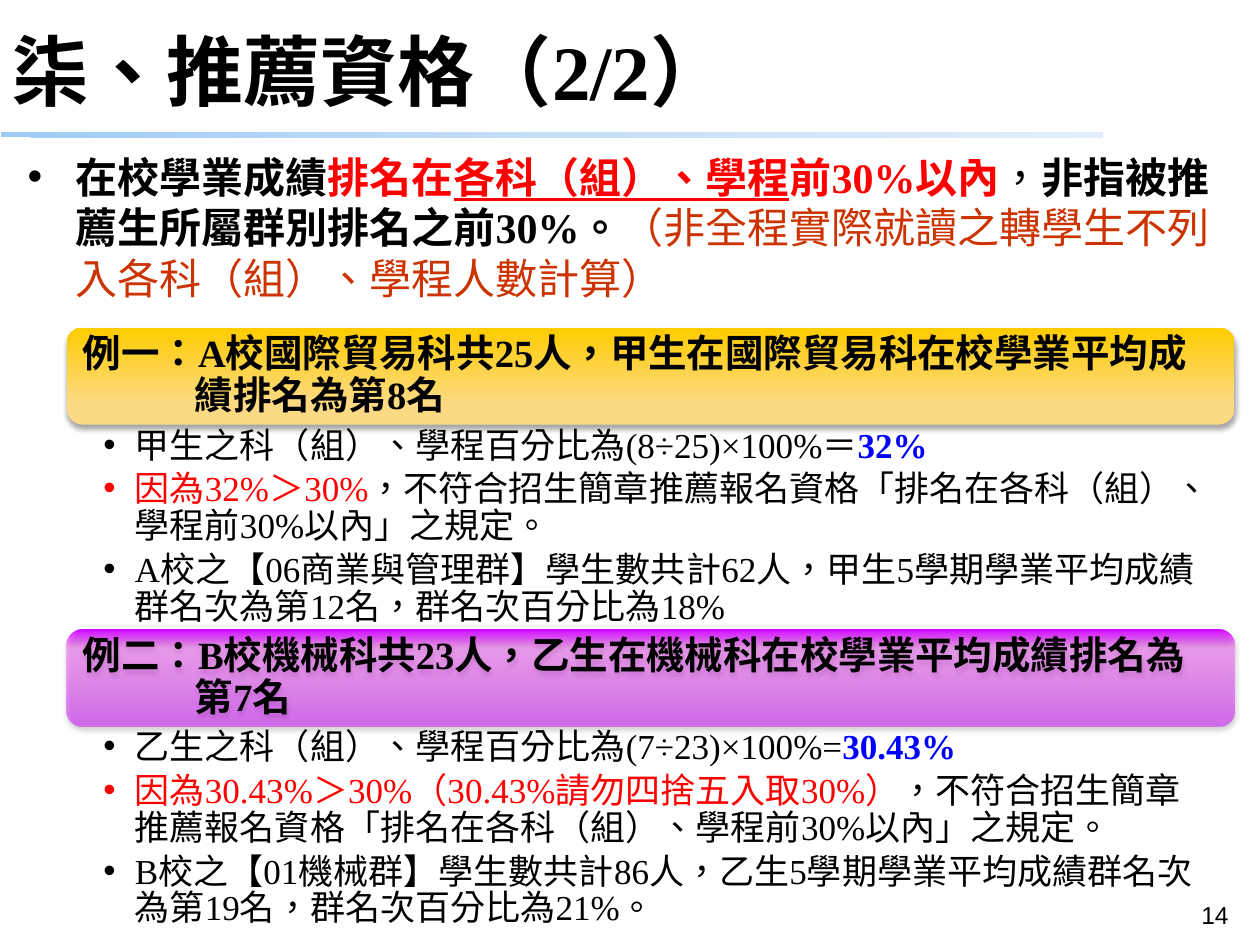
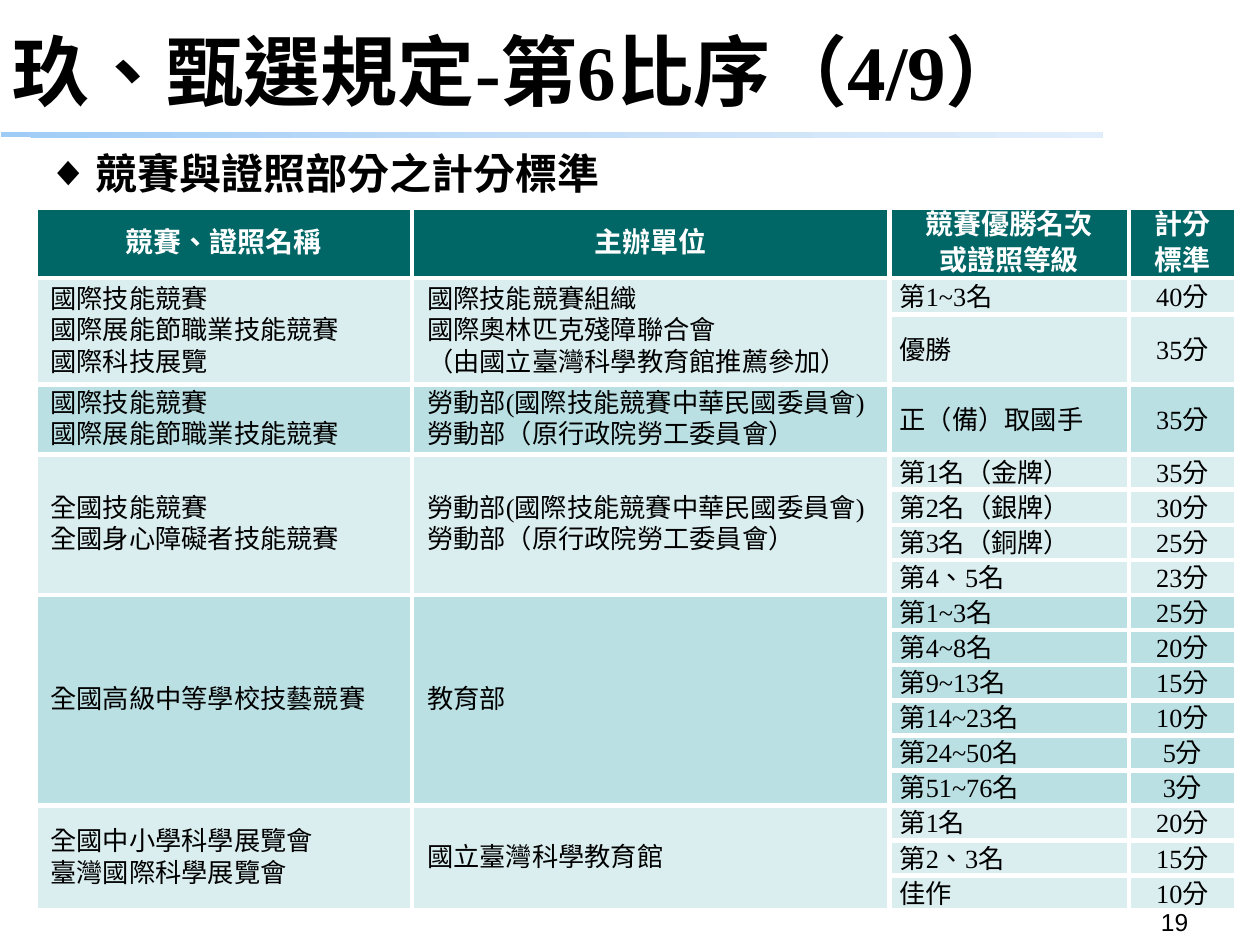
import lxml.etree
import pptx
import pptx.dml.color
import pptx.enum.shapes
import pptx.enum.text
import pptx.oxml.ns
import pptx.util

Pt = pptx.util.Pt
ALIGN = pptx.enum.text.PP_ALIGN
MIDDLE = pptx.enum.text.MSO_ANCHOR.MIDDLE
TOP = pptx.enum.text.MSO_ANCHOR.TOP
SHAPE = pptx.enum.shapes.MSO_SHAPE

WIDE, HIGH = pptx.util.Inches(10), pptx.util.Inches(7.5)
UNIT = WIDE / 100

HUES = {
    "black": "000000", "white": "FFFFFF", "red": "FF0000", "blue": "0000FF",
    "rust": "CC3300", "teal": "006666", "pale": "DAEDEF", "aqua": "BBE0E3",
}
BAND = [(0, "9FCCF6", 100), (50, "C4DEF8", 100), (100, "E2EEFB", 100)]
GOLD = [(21, "FCDA84", 100), (100, "FFCC00", 100)]
PLUM = [(0, "CC00FF", 50), (81, "FF66FF", 50), (100, "CC00FF", 100)]

SERIF, SANS, HAN = "Times New Roman", "Noto Sans CJK SC", "Noto Sans CJK TC"
TITLE = {"name": SERIF, "size": Pt(44), "bold": True}
LEAD = {"name": SERIF, "size": Pt(24), "bold": True}
TOPIC = {"name": SANS, "size": Pt(24), "bold": True}
CASE = {"name": SERIF, "size": Pt(22), "bold": True}
POINT = {"name": SERIF, "size": Pt(20), "bold": False}
PAGE = {"name": "Arial", "size": Pt(14), "bold": False}
HEAD = {"name": SANS, "size": Pt(16), "bold": True, "hue": "white"}
CELL = {"name": SERIF, "size": Pt(15), "bold": False}

COLS = [29.9, 37.9, 19, 8.5]
ROWS = [40, 21, 40, 40] + [20] * 13
HEADS = ["競賽、證照名稱", "主辦單位", "競賽優勝名次|或證照等級", "計分|標準"]
LABOR = "勞動部(國際技能競賽中華民國委員會)|勞動部（原行政院勞工委員會）"
GROUPS = [
    ("國際技能競賽|國際展能節職業技能競賽|國際科技展覽",
     "國際技能競賽組織|國際奧林匹克殘障聯合會|（由國立臺灣科學教育館推薦參加）",
     [("第1~3名", 40), ("優勝", 35)]),
    ("國際技能競賽|國際展能節職業技能競賽", LABOR, [("正（備）取國手", 35)]),
    ("全國技能競賽|全國身心障礙者技能競賽", LABOR,
     [("第1名（金牌）", 35), ("第2名（銀牌）", 30), ("第3名（銅牌）", 25), ("第4、5名", 23)]),
    ("全國高級中等學校技藝競賽", "教育部",
     [("第1~3名", 25), ("第4~8名", 20), ("第9~13名", 15),
      ("第14~23名", 10), ("第24~50名", 5), ("第51~76名", 3)]),
    ("全國中小學科學展覽會|臺灣國際科學展覽會", "國立臺灣科學教育館",
     [("第1名", 20), ("第2、3名", 15), ("佳作", 10)]),
]
RULE = "，不符合招生簡章推薦報名資格「排名在各科（組）、學程前30%以內」之規定。"


def grid(*spans):
    return [pptx.util.Emu(round(span * UNIT)) for span in spans]


def node(base, tag, **attrs):
    vals = {key: str(val) for key, val in attrs.items()}
    return lxml.etree.SubElement(base, pptx.oxml.ns.qn(tag), vals)


def apply(item, look):
    for key, val in look.items():
        setattr(item, key, val)


def write(para, runs, font, hang=0, mark=None, **look):
    apply(para, look)
    if hang:
        props = para._p.get_or_add_pPr()
        step = grid(hang)[0]
        props.set("marL", str(step))
        props.set("indent", str(-step))
        if mark:
            node(props, "a:buFont", typeface="Arial")
            node(props, "a:buChar", char=mark)
    for text, change in runs:
        run = para.add_run()
        run.text = text
        style = {"hue": "black", **font, **change}
        hue = HUES[style.pop("hue")]
        apply(run.font, style)
        run.font.color.rgb = pptx.dml.color.RGBColor.from_string(hue)
        props = run._r.get_or_add_rPr()
        props.set("lang", "zh-TW")
        east = SANS if style["name"] == SANS else HAN
        node(props, "a:ea", typeface=east)


def fill_text(frame, paras, font, **look):
    for i, runs in enumerate(paras):
        para = frame.add_paragraph() if i else frame.paragraphs[0]
        write(para, runs, font, **look)


def frame_of(shape, pads=(1, 0.5, 1, 0.5), anchor=TOP):
    frame = shape.text_frame
    sides = ["margin_left", "margin_top", "margin_right", "margin_bottom"]
    apply(frame, {
        "word_wrap": True, "vertical_anchor": anchor,
        "auto_size": pptx.enum.text.MSO_AUTO_SIZE.NONE,
        **dict(zip(sides, grid(*pads))),
    })
    return frame


def place(shape, box):
    apply(shape, dict(zip(["left", "top", "width", "height"], grid(*box))))
    return shape


def blend(slide, kind, box, stops, turn):
    shape = slide.shapes.add_shape(kind, *grid(*box))
    grad = node(shape._element.spPr, "a:gradFill", rotWithShape=1)
    chain = node(grad, "a:gsLst")
    for spot, hue, solid in stops:
        tint = node(node(chain, "a:gs", pos=spot * 1000), "a:srgbClr", val=hue)
        if solid < 100:
            node(tint, "a:alpha", val=solid * 1000)
    node(grad, "a:lin", ang=turn * 60000, scaled=0)
    shape.line.fill.background()
    shape.shadow.inherit = False
    return shape


def add_page(deck, title, number, box):
    slide = deck.slides.add_slide(deck.slide_layouts[1])
    blend(slide, SHAPE.RECTANGLE, (0.1, 10.5, 87.4, 0.4), BAND, 315)
    head = place(slide.shapes.title, (0, 2.1, 100, 6.9))
    fill_text(frame_of(head, anchor=MIDDLE), [[(title, {})]], TITLE, alignment=ALIGN.LEFT)
    foot = slide.shapes.add_textbox(*grid(*box))
    fill_text(frame_of(foot), [[(number, {})]], PAGE, alignment=ALIGN.RIGHT)
    return slide


def add_lead(slide, box, runs, font, mark):
    body = place(slide.placeholders[1], box)
    fill_text(frame_of(body), [runs], font, hang=3.8, mark=mark, space_before=Pt(0))


def add_case(slide, top, stops, text, points):
    bar = blend(slide, SHAPE.ROUNDED_RECTANGLE, (5.3, top, 92.7, 7.7), stops, 270)
    shade = node(bar._element.spPr.find(pptx.oxml.ns.qn("a:effectLst")), "a:outerShdw",
                 blurRad=Pt(3.1), dist=Pt(1.8), dir=90 * 60000, rotWithShape=0)
    node(node(shade, "a:srgbClr", val=HUES["black"]), "a:alpha", val=35000)
    frame = frame_of(bar, (0.9, 0.9, 0.9, 0.9), MIDDLE)
    fill_text(frame, [[(text, {})]], CASE, hang=8.9, alignment=ALIGN.LEFT, line_spacing=0.9)
    notes = slide.shapes.add_textbox(*grid(5.3, top + 7.7, 92.7, 16.3))
    fill_text(frame_of(notes, (2.9, 0.3, 1.6, 0.3)), points, POINT, hang=2.5, mark="•",
              line_spacing=Pt(21), space_after=Pt(4))


def fill_cell(cell, text, hue, font, pad, align, pitch):
    props = cell._tc.get_or_add_tcPr()
    for side in "LRTB":
        edge = node(props, "a:ln" + side, w=Pt(3))
        node(node(edge, "a:solidFill"), "a:srgbClr", val=HUES["white"])
    cell.fill.solid()
    cell.fill.fore_color.rgb = pptx.dml.color.RGBColor.from_string(HUES[hue])
    left, right = grid(pad, 0.2)
    apply(cell, {"vertical_anchor": MIDDLE, "margin_left": left, "margin_right": right,
                 "margin_top": 0, "margin_bottom": 0})
    if text:
        paras = [[(line, {})] for line in text.split("|")]
        fill_text(cell.text_frame, paras, font, alignment=align, line_spacing=Pt(pitch))


def add_scores(slide):
    box = grid(2.8, 16.5, sum(COLS)) + [Pt(sum(ROWS))]
    table = slide.shapes.add_table(len(ROWS), len(COLS), *box).table
    table.horz_banding = False
    for col, width in zip(table.columns, grid(*COLS)):
        col.width = width
    for row, height in zip(table.rows, ROWS):
        row.height = Pt(height)
    for c, text in enumerate(HEADS):
        fill_cell(table.cell(0, c), text, "teal", HEAD, 0.2, ALIGN.CENTER, 20)
    first = 1
    for g, (name, host, ranks) in enumerate(GROUPS):
        hue = ["pale", "aqua"][g % 2]
        for i, (rank, score) in enumerate(ranks):
            row = first + i
            for c, text in enumerate([name, host]):
                fill_cell(table.cell(row, c), "" if i else text, hue, CELL, 1.2, ALIGN.JUSTIFY, 18)
            fill_cell(table.cell(row, 2), rank, hue, CELL, 0.8, ALIGN.JUSTIFY, 20)
            fill_cell(table.cell(row, 3), f"{score}分", hue, CELL, 0.2, ALIGN.CENTER, 20)
        last = first + len(ranks) - 1
        if last > first:
            for c in range(2):
                table.cell(first, c).merge(table.cell(last, c))
        first = last + 1


def main():
    deck = pptx.Presentation()
    deck.slide_width, deck.slide_height = WIDE, HIGH
    red, blue = {"hue": "red"}, {"hue": "blue", "bold": True}

    slide = add_page(deck, "柒、推薦資格（2/2）", "14", (75.2, 70.9, 23.3, 4.1))
    add_lead(slide, (1.2, 11.5, 96.9, 13.4), [
        ("在校學業成績", {}),
        ("排名在", red),
        ("各科（組）、學程", {**red, "underline": True}),
        ("前30%以內", red),
        ("，", {"bold": False}),
        ("非指被推薦生所屬群別排名之前30%。", {}),
        ("（非全程實際就讀之轉學生不列入各科（組）、學程人數計算）", {"hue": "rust", "bold": False}),
    ], LEAD, "•")
    add_case(slide, 26, GOLD, "例一：A校國際貿易科共25人，甲生在國際貿易科在校學業平均成績排名為第8名", [
        [("甲生之科（組）、學程百分比為(8÷25)×100%＝", {}), ("32%", blue)],
        [("因為32%＞30%", red), (RULE, {})],
        [("A校之【06商業與管理群】學生數共計62人，甲生5學期學業平均成績群名次為第12名，群名次百分比為18%", {})],
    ])
    add_case(slide, 49.95, PLUM, "例二：B校機械科共23人，乙生在機械科在校學業平均成績排名為第7名", [
        [("乙生之科（組）、學程百分比為(7÷23)×100%=", {}), ("30.43%", blue)],
        [("因為30.43%＞30%（30.43%請勿四捨五入取30%）", red), (RULE, {})],
        [("B校之【01機械群】學生數共計86人，乙生5學期學業平均成績群名次為第19名，群名次百分比為21%。", {})],
    ])

    slide = add_page(deck, "玖、甄選規定-第6比序（4/9）", "19", (72, 71.5, 23.3, 3.5))
    add_lead(slide, (2.8, 11.2, 46.5, 5), [("競賽與證照部分之計分標準", {})], TOPIC, "◆")
    add_scores(slide)
    deck.save("out.pptx")


if __name__ == "__main__":
    main()
